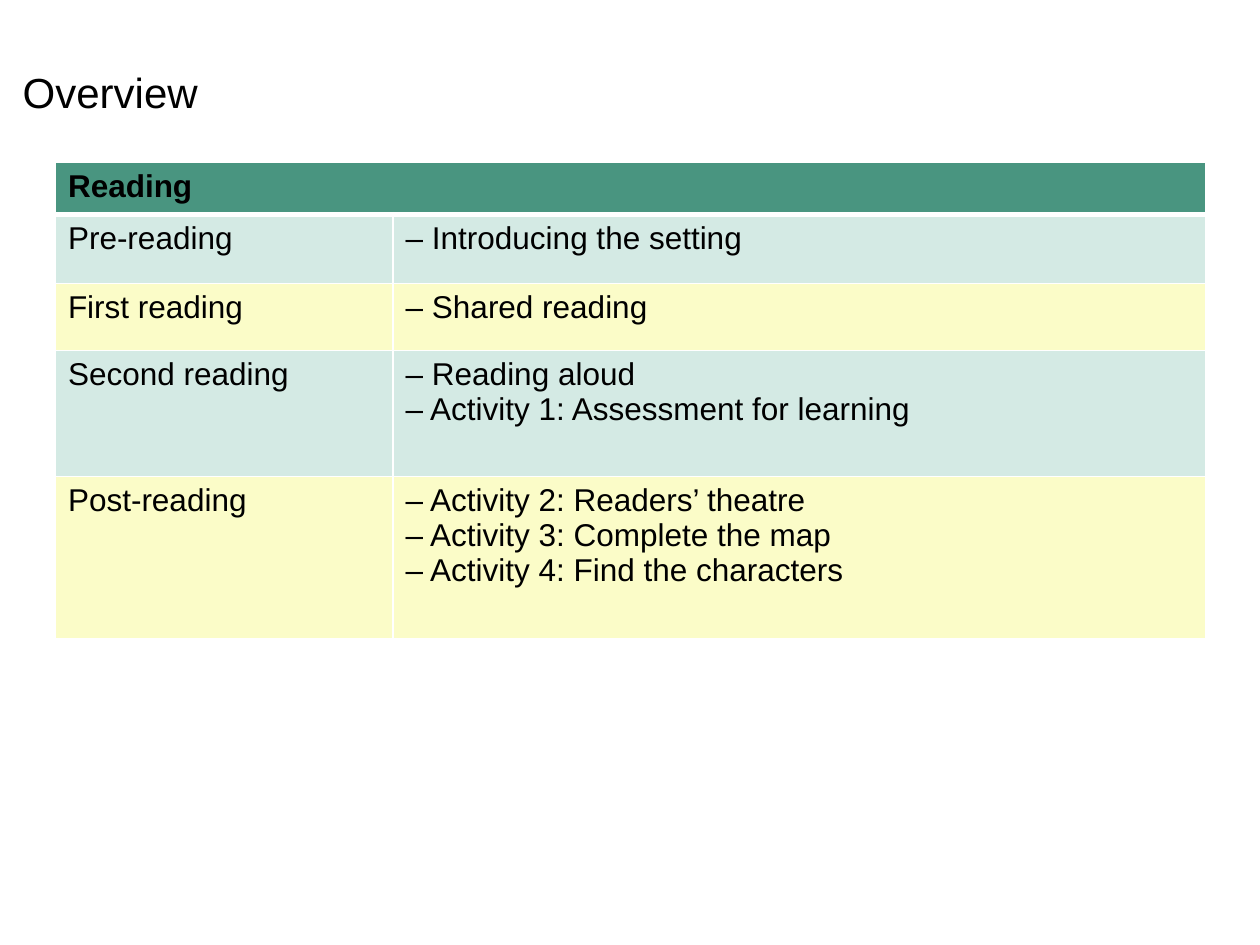
import pptx
import pptx.dml.color
import pptx.enum.text
import pptx.oxml.ns
import pptx.util
from lxml import etree
from pptx.util import Inches

COLORS = {"text": "000000", "header": "499580", "mint": "D4EAE4",
          "cream": "FBFCC8", "border": "FFFFFF"}
FONT = "Arial"
STAGES = [
    ("Pre-reading", ["– Introducing the setting"]),
    ("First reading", ["– Shared reading"]),
    ("Second reading", ["– Reading aloud",
                        "– Activity 1: Assessment for learning"]),
    ("Post-reading", ["– Activity 2: Readers’ theatre",
                      "– Activity 3: Complete the map",
                      "– Activity 4: Find the characters"]),
]
COLUMN_WIDTHS = [2.68, 6.45]
ROW_HEIGHTS = [0.41, 0.55, 0.53, 1, 1.29]


def rgb(name):
    return pptx.dml.color.RGBColor.from_string(COLORS[name])


def add_text(para, text, size, bold=False):
    para.alignment = pptx.enum.text.PP_ALIGN.LEFT
    span = para.add_run()
    span.text = text
    span.font.name = FONT
    span.font.size = pptx.util.Pt(size)
    span.font.bold = bold
    span.font.color.rgb = rgb("text")


def set_borders(cell, top=1, bottom=1):
    """Draw the four cell borders; widths are in points."""
    properties = cell._tc.get_or_add_tcPr()
    widths = {"lnL": 1, "lnR": 1, "lnT": top, "lnB": bottom}
    for index, (tag, width) in enumerate(widths.items()):
        line = etree.Element(pptx.oxml.ns.qn(f"a:{tag}"),
                             w=str(pptx.util.Pt(width)))
        fill = etree.SubElement(line, pptx.oxml.ns.qn("a:solidFill"))
        etree.SubElement(fill, pptx.oxml.ns.qn("a:srgbClr"),
                         val=COLORS["border"])
        properties.insert(index, line)


def fill_cell(cell, lines, color, bold=False):
    cell.fill.solid()
    cell.fill.fore_color.rgb = rgb(color)
    for index, text in enumerate(lines):
        frame = cell.text_frame
        para = frame.add_paragraph() if index else frame.paragraphs[0]
        add_text(para, text, 18, bold)


def place_title(page, left, top, width, height):
    title = page.shapes.title
    title.left, title.top = Inches(left), Inches(top)
    title.width, title.height = Inches(width), Inches(height)
    frame = title.text_frame
    frame.word_wrap = False
    frame.auto_size = pptx.enum.text.MSO_AUTO_SIZE.SHAPE_TO_FIT_TEXT
    frame.vertical_anchor = pptx.enum.text.MSO_ANCHOR.TOP
    add_text(frame.paragraphs[0], "Overview", 24)


def place_reading_table(page, left, top):
    table = page.shapes.add_table(
        len(ROW_HEIGHTS), len(COLUMN_WIDTHS), Inches(left), Inches(top),
        Inches(sum(COLUMN_WIDTHS)), Inches(sum(ROW_HEIGHTS))).table
    for column, width in zip(table.columns, COLUMN_WIDTHS):
        column.width = Inches(width)
    for row, height in zip(table.rows, ROW_HEIGHTS):
        row.height = Inches(height)

    table.cell(0, 0).merge(table.cell(0, 1))
    fill_cell(table.cell(0, 0), ["Reading"], "header", bold=True)
    for number, (stage, activities) in enumerate(STAGES, start=1):
        color = "mint" if number % 2 else "cream"
        fill_cell(table.cell(number, 0), [stage], color)
        fill_cell(table.cell(number, 1), activities, color)

    for number, row in enumerate(table.rows):
        for cell in row.cells:
            set_borders(cell, top=3 if number == 1 else 1,
                        bottom=3 if number == 0 else 1)


def main():
    deck = pptx.Presentation()
    deck.slide_width, deck.slide_height = Inches(10), Inches(7.5)
    page = deck.slides.add_slide(deck.slide_layouts.get_by_name("Title Only"))
    place_title(page, 0.08, 0.48, 1.61, 0.5)
    place_reading_table(page, 0.44, 1.29)
    deck.save("out.pptx")


if __name__ == "__main__":
    main()
